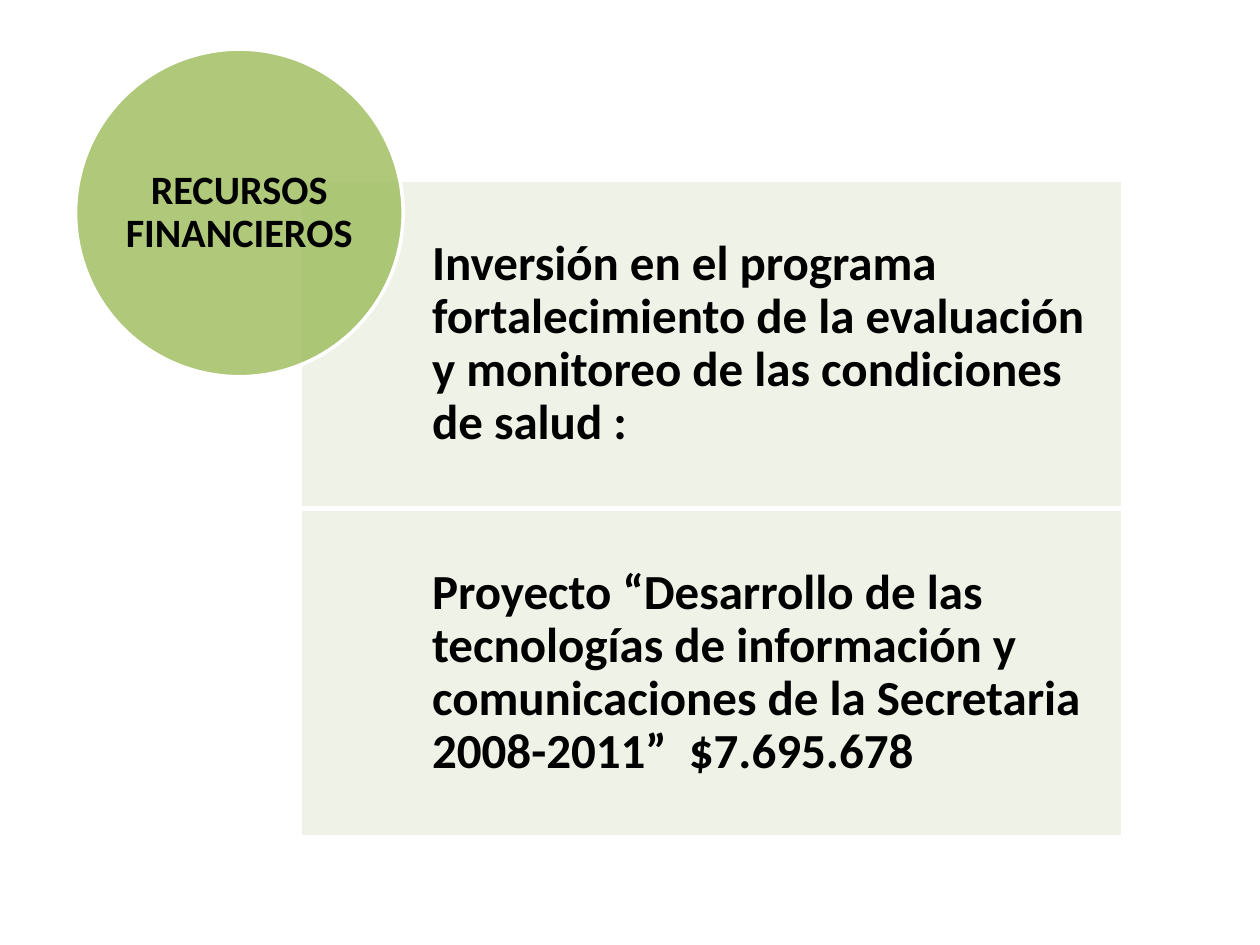
from lxml import etree
from pptx import Presentation
from pptx.dml.color import RGBColor
from pptx.enum.shapes import MSO_SHAPE
from pptx.enum.text import MSO_ANCHOR, PP_ALIGN
from pptx.oxml.ns import qn
from pptx.util import Inches, Pt

RECT, OVAL = MSO_SHAPE.RECTANGLE, MSO_SHAPE.OVAL
LEFT, CENTER = PP_ALIGN.LEFT, PP_ALIGN.CENTER
MIDDLE = MSO_ANCHOR.MIDDLE

TOPIC = "RECURSOS FINANCIEROS"
ITEMS = [
    "Inversión en el programa fortalecimiento de la evaluación y monitoreo "
    "de las condiciones de salud :",
    "Proyecto “Desarrollo de las tecnologías de información y comunicaciones "
    "de la Secretaria 2008-2011”  $7.695.678",
]
COLORS = {"panel": "DEE7D1", "circle": "9BBB59", "line": "FFFFFF", "text": "000000"}
SIDE = 2.6
PANEL = {"left": 2.38, "top": 1.43, "width": 6.53, "step": 2.61}
INSETS = (1.05, 0.22, 0.22, 0.22)


def color(name):
    return RGBColor.from_string(COLORS[name])


def add_block(slide, kind, box, fill, alpha, text, size, align, insets):
    """Add a translucent shape with bold text; alpha is opacity in percent."""
    shape = slide.shapes.add_shape(kind, *map(Inches, box))
    shape.shadow.inherit = False
    shape.fill.solid()
    shape.fill.fore_color.rgb = color(fill)
    tint = shape.fill._xPr.find(qn("a:solidFill"))[0]
    etree.SubElement(tint, qn("a:alpha"), val=str(alpha * 1000))
    shape.line.color.rgb = color("line")
    shape.line.width = Pt(2)

    frame = shape.text_frame
    frame.word_wrap = True
    frame.vertical_anchor = MIDDLE
    for side, inset in zip(("left", "top", "right", "bottom"), insets):
        setattr(frame, f"margin_{side}", Inches(inset))
    para = frame.paragraphs[0]
    para.alignment = align
    para.line_spacing = 0.9
    run = para.add_run()
    run.text = text
    for key, value in {"name": "Calibri", "size": Pt(size), "bold": True}.items():
        setattr(run.font, key, value)
    run.font.color.rgb = color("text")


def main():
    deck = Presentation()
    deck.slide_width, deck.slide_height = Inches(10), Inches(7.5)
    slide = deck.slides.add_slide(deck.slide_layouts[6])
    for row, text in enumerate(ITEMS):
        top = PANEL["top"] + row * PANEL["step"]
        box = (PANEL["left"], top, PANEL["width"], SIDE)
        add_block(slide, RECT, box, "panel", 50, text, 28, LEFT, INSETS)
    add_block(slide, OVAL, (0.6, 0.39, SIDE, SIDE), "circle", 80,
              TOPIC, 23, CENTER, (0, 0, 0, 0))
    deck.save("out.pptx")


if __name__ == "__main__":
    main()
